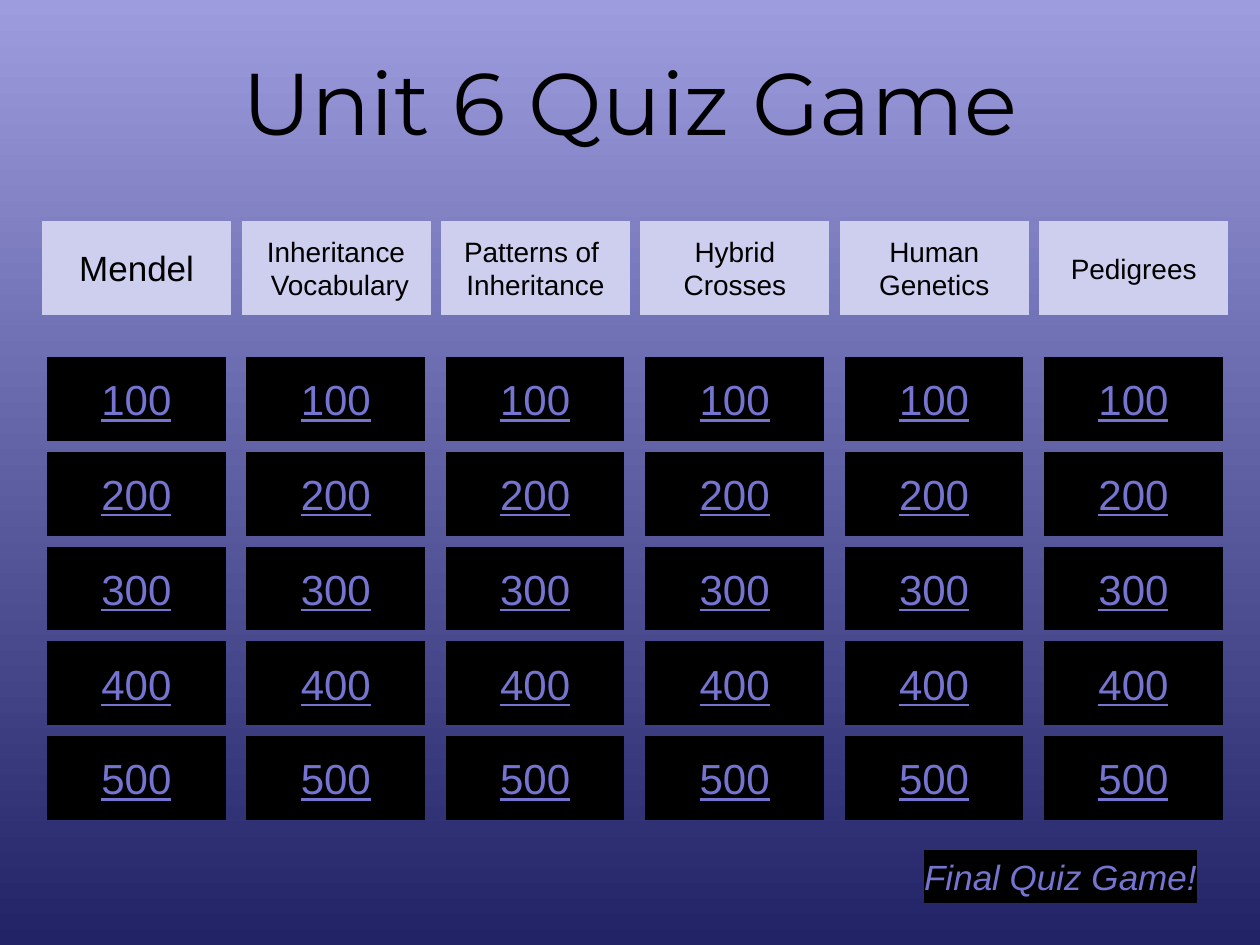
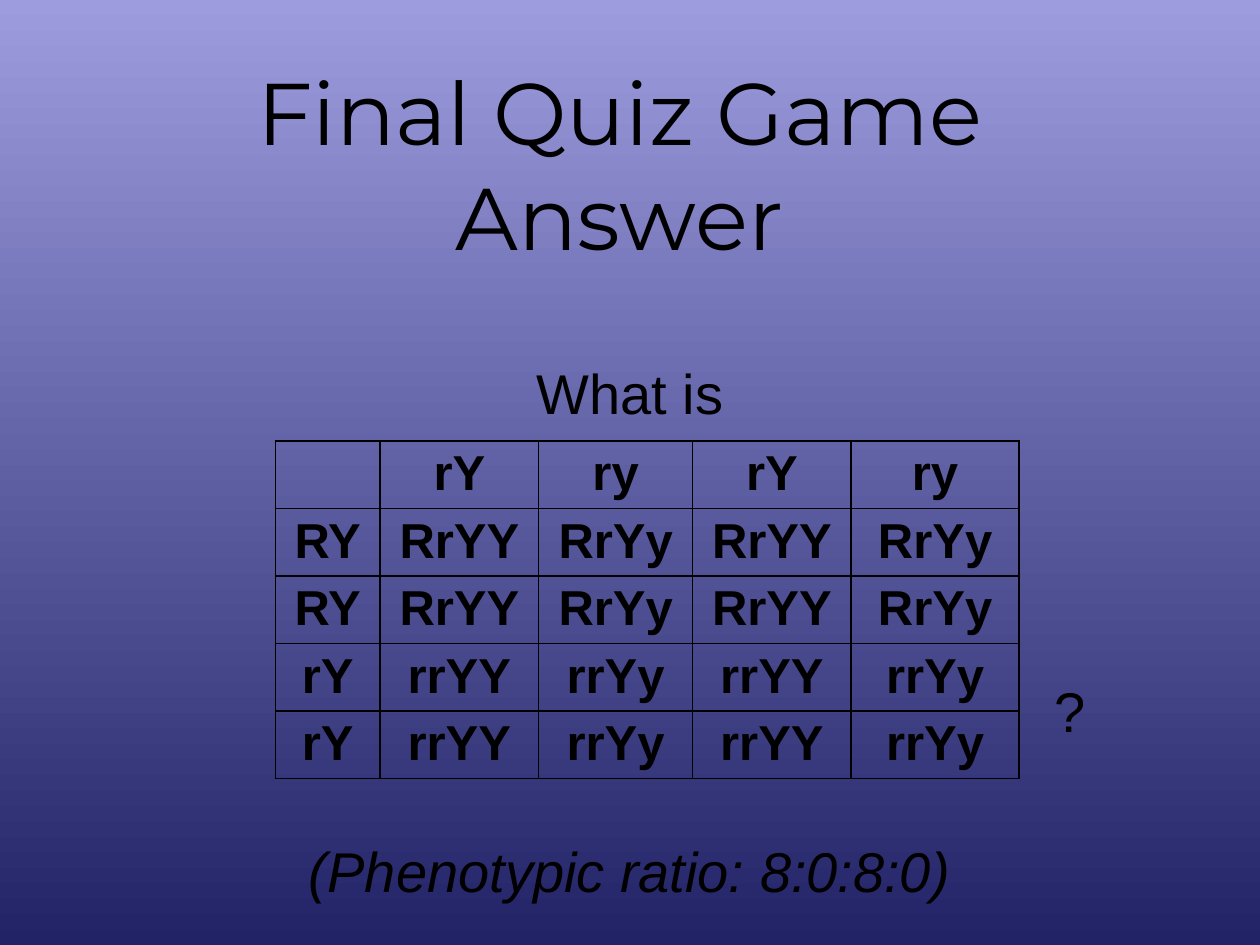
from lxml.etree import SubElement
from pptx import Presentation
from pptx.dml.color import RGBColor
from pptx.enum.shapes import MSO_SHAPE
from pptx.enum.text import MSO_ANCHOR, MSO_AUTO_SIZE, PP_ALIGN
from pptx.oxml.ns import qn
from pptx.util import Cm, Pt

BLACK = RGBColor(0x00, 0x00, 0x00)
LAVENDER = RGBColor(0xCE, 0xCE, 0xEF)
LINK_BLUE = RGBColor(0x75, 0x75, 0xD1)
SKY_TOP = RGBColor(0x9C, 0x9C, 0xDF)
SKY_BOTTOM = RGBColor(0x22, 0x22, 0x67)
TITLE_FONT = "Montserrat"
TEXT_FONT = "Arial"


def write_text(text_frame, text, size, color=BLACK, font=TEXT_FONT):
    """Fill a frame with centred paragraphs and return their fonts."""
    text_frame.text = text
    fonts = []
    for paragraph in text_frame.paragraphs:
        paragraph.alignment = PP_ALIGN.CENTER
        for run in paragraph.runs:
            run.font.name = font
            run.font.size = Pt(size)
            run.font.color.rgb = color
            fonts.append(run.font)
    return fonts


def add_button(slide, left, top, width, height, fill, text, size, color):
    button = slide.shapes.add_shape(
        MSO_SHAPE.ACTION_BUTTON_CUSTOM, Cm(left), Cm(top), Cm(width), Cm(height))
    button.shadow.inherit = False
    button.fill.solid()
    button.fill.fore_color.rgb = fill
    button.line.fill.background()
    button.text_frame.word_wrap = False
    button.text_frame.vertical_anchor = MSO_ANCHOR.MIDDLE
    return write_text(button.text_frame, text, size, color)


presentation = Presentation()
presentation.slide_width = Cm(25.4)
presentation.slide_height = Cm(19.05)

# Shared background
background = presentation.slide_master.background.fill
background.gradient()
background.gradient_angle = 270
for stop, color, position in zip(background.gradient_stops, (SKY_TOP, SKY_BOTTOM), (0, 1)):
    stop.color.rgb = color
    stop.position = position

# Both slides with their titles
slides = []
for layout, text, left, top, width in (
    (5, "Unit 6 Quiz Game", 0.85, 0.43, 23.7),
    (1, "Final Quiz Game Answer", 1.7, 1.7, 21.59),
):
    slide = presentation.slides.add_slide(presentation.slide_layouts[layout])
    title = slide.shapes.title
    title.left, title.top, title.width, title.height = Cm(left), Cm(top), Cm(width), Cm(3.18)
    title.text_frame.auto_size = MSO_AUTO_SIZE.NONE
    title.text_frame.vertical_anchor = MSO_ANCHOR.MIDDLE
    write_text(title.text_frame, text, 50, font=TITLE_FONT)
    slides.append(slide)
board, answer = slides

# Game board
CATEGORIES = (
    ("Mendel", 20),
    ("Inheritance\n Vocabulary", 16),
    ("Patterns of \nInheritance", 16),
    ("Hybrid\nCrosses", 16),
    ("Human\nGenetics", 16),
    ("Pedigrees", 16),
)
COLUMN_STEP, ROW_STEP = 4.02, 1.91
for column, (category, size) in enumerate(CATEGORIES):
    offset = column * COLUMN_STEP
    add_button(board, 0.85 + offset, 4.45, 3.81, 1.9, LAVENDER, category, size, BLACK)
    for row in range(5):
        points = str(100 * (row + 1))
        fonts = add_button(board, 0.95 + offset, 7.2 + row * ROW_STEP, 3.6, 1.69,
                           BLACK, points, 24, LINK_BLUE)
        fonts[0].underline = True
final_fonts = add_button(board, 18.63, 17.14, 5.5, 1.07, BLACK, "Final Quiz Game!", 20, LINK_BLUE)
final_fonts[0].italic = True

# Answer text around the table
body = answer.placeholders[1]
body.left, body.top, body.width, body.height = Cm(0), Cm(6.99), Cm(25.4), Cm(12.06)
body.text_frame.auto_size = MSO_AUTO_SIZE.NONE
body.text_frame.margin_top = Cm(0.24)
body_fonts = write_text(body.text_frame, "What is\n?\n(Phenotypic ratio: 8:0:8:0)", 32)
body_fonts[-1].italic = True
for paragraph, space, indent in zip(body.text_frame.paragraphs, (0, 143, 53), (0, 17.73, 0)):
    paragraph.space_before = Pt(space)
    properties = paragraph._p.get_or_add_pPr()
    properties.set("marL", str(Cm(indent)))
    properties.set("indent", "0")
    SubElement(properties, qn("a:buNone"))

# Punnett square: each cell joins the alleles of its row and column
FATHER = ("rY", "ry", "rY", "ry")
MOTHER = ("RY", "RY", "rY", "rY")
COLUMN_WIDTHS = (2.11, 3.2, 3.1, 3.2, 3.38)
ROW_HEIGHT = 1.36
genotypes = [("", *FATHER)]
for mother in MOTHER:
    genotypes.append((mother, *(mother[0] + father[0] + mother[1] + father[1] for father in FATHER)))

frame = answer.shapes.add_table(5, 5, Cm(5.55), Cm(8.89), Cm(sum(COLUMN_WIDTHS)), Cm(5 * ROW_HEIGHT))
table = frame.table
table.first_row = table.horz_banding = False
for column, width in zip(table.columns, COLUMN_WIDTHS):
    column.width = Cm(width)
for row, texts in zip(table.rows, genotypes):
    row.height = Cm(ROW_HEIGHT)
    for cell, text in zip(row.cells, texts):
        cell.margin_top = cell.margin_bottom = Cm(0.11)
        for font in write_text(cell.text_frame, text, 28):
            font.bold = True
        cell_properties = cell._tc.get_or_add_tcPr()
        for side in ("a:lnL", "a:lnR", "a:lnT", "a:lnB"):
            border = SubElement(cell_properties, qn(side), w=str(Pt(1)))
            border_fill = SubElement(border, qn("a:solidFill"))
            SubElement(border_fill, qn("a:srgbClr"), val=str(BLACK))
        cell.fill.background()

presentation.save("out.pptx")
